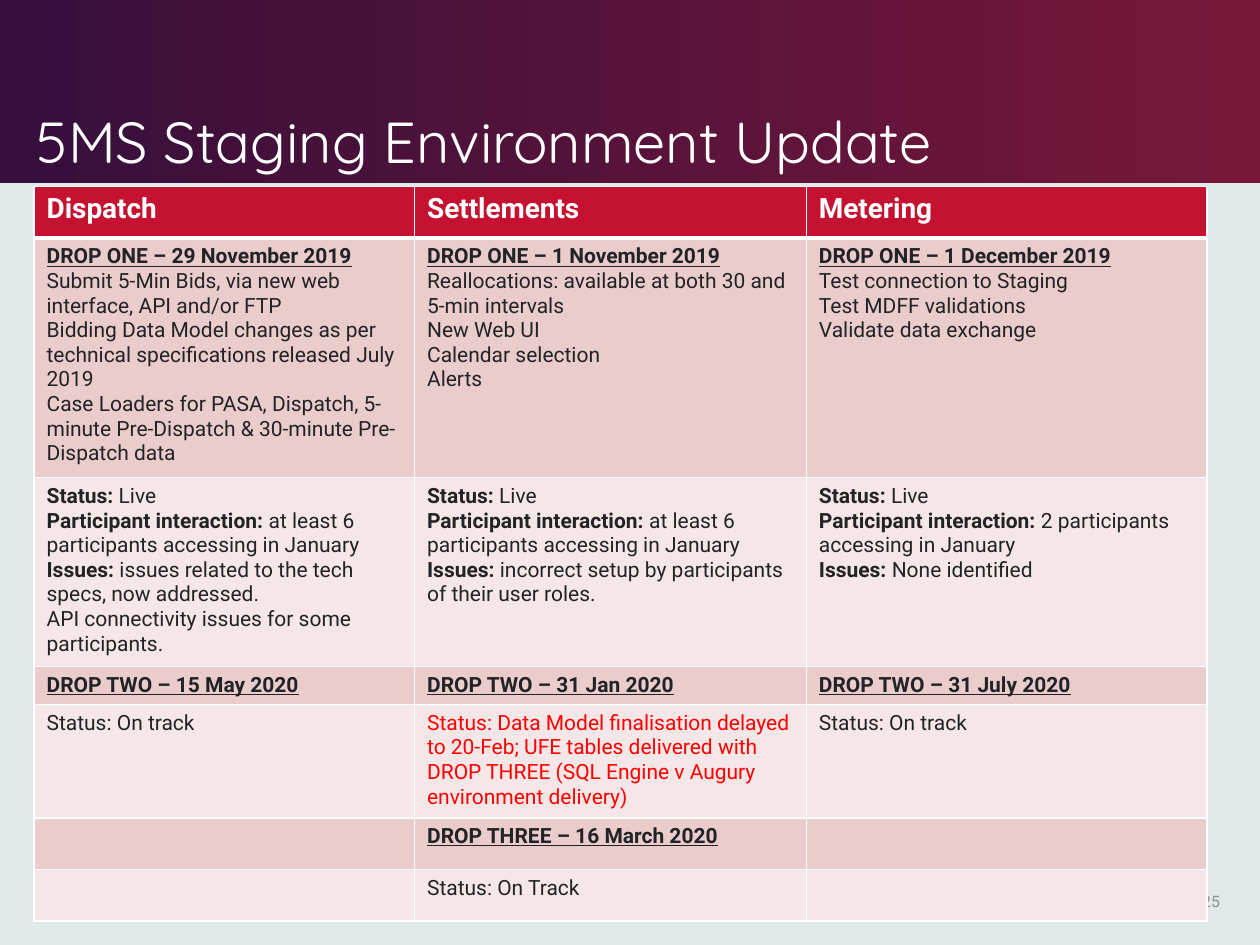
from pptx import Presentation
from pptx.dml.color import RGBColor
from pptx.enum.shapes import MSO_SHAPE
from pptx.enum.text import MSO_ANCHOR, PP_ALIGN
from pptx.oxml import parse_xml
from pptx.oxml.ns import nsdecls
from pptx.util import Inches, Pt

PALE = RGBColor(0xE0, 0xE8, 0xEA)
PURPLE = RGBColor(0x36, 0x0F, 0x3C)
MAROON = RGBColor(0x77, 0x17, 0x38)
WHITE = RGBColor(0xFF, 0xFF, 0xFF)
GRAY = RGBColor(0x8D, 0x8D, 0x8E)
CRIMSON = RGBColor(0xC4, 0x12, 0x30)
PINK = RGBColor(0xEA, 0xCC, 0xCD)
LIGHT_PINK = RGBColor(0xF5, 0xE7, 0xE8)
INK = RGBColor(0x22, 0x23, 0x24)
RED = RGBColor(0xFF, 0x00, 0x00)

COL_WIDTHS = [3.02, 3.11, 3.18]
ROW_HEIGHTS = [0.41, 0.41, 0.41, 0.15, 0.41, 0.41, 0.41]
ROWS = [
    ["Dispatch", "Settlements", "Metering"],
    [
        "DROP ONE – 29 November 2019\n"
        "Submit 5-Min Bids, via new web interface, API and/or FTP\n"
        "Bidding Data Model changes as per technical specifications released July 2019\n"
        "Case Loaders for PASA, Dispatch, 5-minute Pre-Dispatch & 30-minute Pre-Dispatch data",
        "DROP ONE – 1 November 2019\n"
        "Reallocations: available at both 30 and 5-min intervals\n"
        "New Web UI\nCalendar selection\nAlerts",
        "DROP ONE – 1 December 2019\n"
        "Test connection to Staging\nTest MDFF validations\nValidate data exchange",
    ],
    [
        "Status: Live\n"
        "Participant interaction: at least 6 participants accessing in January\n"
        "Issues: issues related to the tech specs, now addressed.\n"
        "API connectivity issues for some participants.",
        "Status: Live\n"
        "Participant interaction: at least 6 participants accessing in January\n"
        "Issues: incorrect setup by participants of their user roles.",
        "Status: Live\n"
        "Participant interaction: 2 participants accessing in January\n"
        "Issues: None identified",
    ],
    ["DROP TWO – 15 May 2020", "DROP TWO – 31 Jan 2020", "DROP TWO – 31 July 2020"],
    [
        "Status: On track",
        "Status: Data Model finalisation delayed to 20-Feb; UFE tables delivered with "
        "DROP THREE (SQL Engine v Augury environment delivery)",
        "Status: On track",
    ],
    ["", "DROP THREE – 16 March 2020", ""],
    ["", "Status: On Track", ""],
]


def add_text(s, text, box, font, size, color, anchor, align=PP_ALIGN.LEFT):
    tf = s.shapes.add_textbox(*[Inches(v) for v in box]).text_frame
    tf.word_wrap = True
    tf.vertical_anchor = anchor
    tf.text = text
    p = tf.paragraphs[0]
    p.alignment = align
    f = p.runs[0].font
    f.name, f.size, f.color.rgb = font, Pt(size), color
    return p


def add_borders(cell, bottom):
    tcPr = cell._tc.get_or_add_tcPr()
    for side, width in (("L", 1), ("R", 1), ("T", 1), ("B", bottom)):
        tcPr.append(parse_xml(
            f'<a:ln{side} {nsdecls("a")} w="{Pt(width)}"><a:solidFill>'
            f'<a:srgbClr val="{WHITE}"/></a:solidFill></a:ln{side}>'))


prs = Presentation()
prs.slide_width, prs.slide_height = Inches(10), Inches(7.5)
s = prs.slides.add_slide(prs.slide_layouts[6])
s.background.fill.solid()
s.background.fill.fore_color.rgb = PALE

banner = s.shapes.add_shape(MSO_SHAPE.RECTANGLE, 0, 0, Inches(10), Inches(1.45))
banner.shadow.inherit = False
banner.line.fill.background()
banner.fill.gradient()
banner.fill.gradient_angle = 0
for stop, position, color in zip(banner.fill.gradient_stops, (0, 0.99), (PURPLE, MAROON)):
    stop.position = position
    stop.color.rgb = color

title = add_text(s, "5MS Staging Environment Update", (0.19, 0.15, 7.9, 1.3),
                 "Quicksand", 33, WHITE, MSO_ANCHOR.BOTTOM)
title.line_spacing = 0.9
add_text(s, "25", (9.31, 6.95, 0.47, 0.4), "Roboto", 9, GRAY, MSO_ANCHOR.MIDDLE, PP_ALIGN.RIGHT)

table = s.shapes.add_table(len(ROWS), len(COL_WIDTHS), Inches(0.27), Inches(1.48),
                           Inches(sum(COL_WIDTHS)), Inches(sum(ROW_HEIGHTS))).table
table.horz_banding = False
for column, width in zip(table.columns, COL_WIDTHS):
    column.width = Inches(width)

for i, texts in enumerate(ROWS):
    table.rows[i].height = Inches(ROW_HEIGHTS[i])
    header = i == 0
    for j, text in enumerate(texts):
        cell = table.cell(i, j)
        add_borders(cell, 3 if header else 1)
        cell.fill.solid()
        cell.fill.fore_color.rgb = CRIMSON if header else PINK if i % 2 else LIGHT_PINK
        color = WHITE if header else RED if (i, j) == (4, 1) else INK
        cell.text_frame.text = text
        for p in cell.text_frame.paragraphs:
            drop = p.text.startswith("DROP")
            label, colon, detail = p.text.partition(": ")
            labelled = i == 2 and bool(colon)
            if labelled:
                p.text = label + colon
                p.add_run().text = detail
            for k, r in enumerate(p.runs):
                f = r.font
                f.name, f.size, f.color.rgb = "Roboto", Pt(16 if header else 12), color
                f.bold = header or drop or (labelled and k == 0)
                f.underline = drop

prs.save("out.pptx")
